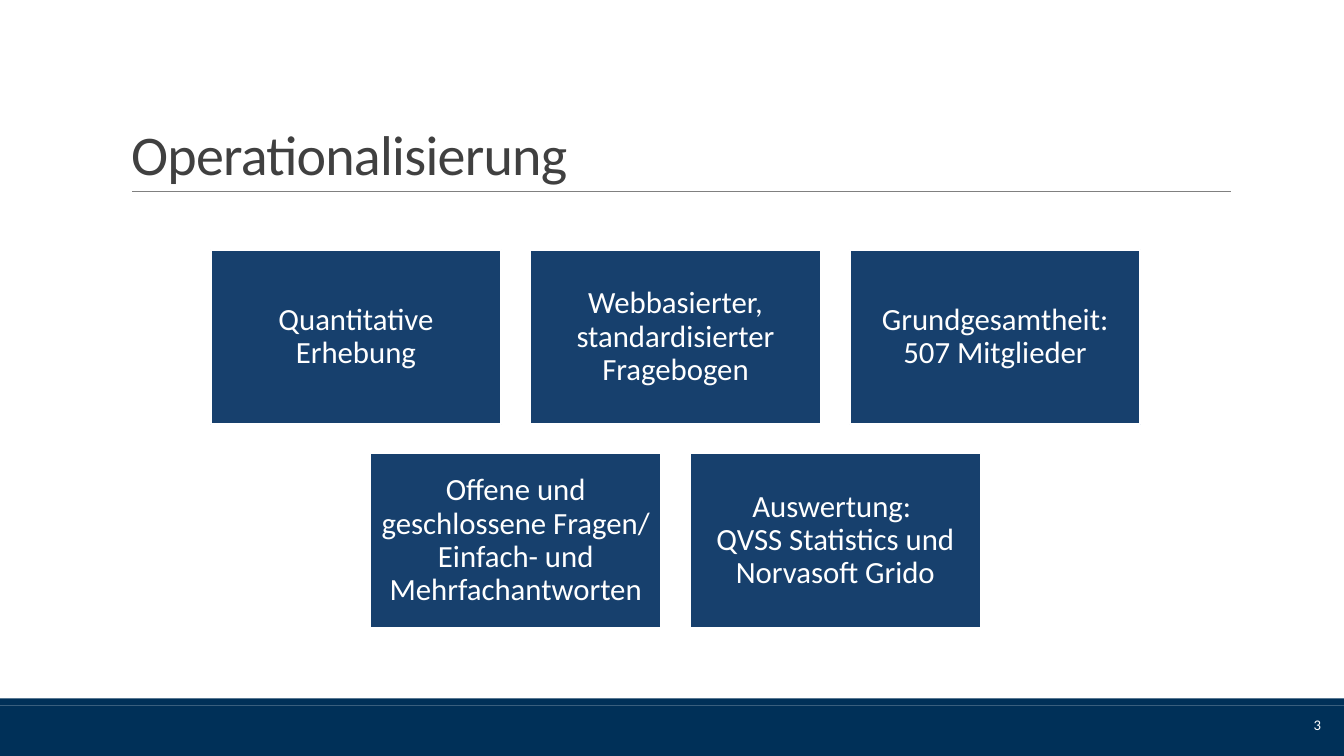
from lxml import etree
from pptx import Presentation
from pptx.dml.color import RGBColor
from pptx.enum.shapes import MSO_CONNECTOR, MSO_SHAPE
from pptx.enum.text import MSO_ANCHOR, MSO_AUTO_SIZE, PP_ALIGN
from pptx.oxml.ns import qn
from pptx.util import Inches, Pt

RECTANGLE = MSO_SHAPE.RECTANGLE
MIDDLE, BOTTOM = MSO_ANCHOR.MIDDLE, MSO_ANCHOR.BOTTOM
LEFT, CENTER, RIGHT = PP_ALIGN.LEFT, PP_ALIGN.CENTER, PP_ALIGN.RIGHT

# Content
TITLE = "Operationalisierung"
PAGE_NUMBER = "3"
CARD_ROWS = [
    [
        "Quantitative Erhebung",
        "Webbasierter, standardisierter Fragebogen",
        "Grundgesamtheit: 507 Mitglieder",
    ],
    [
        "Offene und geschlossene Fragen/ Einfach- und Mehrfachantworten",
        "Auswertung: \vQVSS Statistics und Norvasoft Grido",
    ],
]

# Style
FONT = "Calibri"
NAVY = RGBColor(0x00, 0x30, 0x58)
BLUE = RGBColor(0x17, 0x40, 0x6D)
GRAY = RGBColor(0x80, 0x80, 0x80)
DARK = RGBColor(0x40, 0x40, 0x40)
WHITE = RGBColor(0xFF, 0xFF, 0xFF)

# Layout in inches
PAGE_WIDTH, PAGE_HEIGHT = 13.33, 7.5
CARD_WIDTH, CARD_HEIGHT = 2.88, 1.73
COLUMN_STEP, ROW_STEP = 3.17, 2.02
CARDS_CENTER, CARDS_TOP = 6.7, 2.48


def add_rectangle(page, left, top, width, height, fill):
    box = page.shapes.add_shape(
        RECTANGLE, Inches(left), Inches(top), Inches(width), Inches(height))
    box.shadow.inherit = False
    box.fill.solid()
    box.fill.fore_color.rgb = fill
    box.line.fill.background()
    return box


def write(box, text, size, color, align, anchor, spacing=1.0):
    frame = box.text_frame
    frame.word_wrap = True
    frame.auto_size = MSO_AUTO_SIZE.NONE
    frame.vertical_anchor = anchor
    para = frame.paragraphs[0]
    para.text = text
    para.alignment = align
    para.line_spacing = spacing
    for span in para.runs:
        span.font.name = FONT
        span.font.size = Pt(size)
        span.font.color.rgb = color
    return para


def add_card(page, left, top, text):
    card = add_rectangle(page, left, top, CARD_WIDTH, CARD_HEIGHT, BLUE)
    card.line.color.rgb = WHITE
    card.line.width = Pt(1.25)
    frame = card.text_frame
    frame.margin_left = frame.margin_right = Inches(0.09)
    frame.margin_top = frame.margin_bottom = Inches(0.09)
    write(card, text, 22, WHITE, CENTER, MIDDLE, 0.9)


def main():
    deck = Presentation()
    deck.slide_width = Inches(PAGE_WIDTH)
    deck.slide_height = Inches(PAGE_HEIGHT)
    page = deck.slides.add_slide(deck.slide_layouts[5])

    # Footer bands
    for top, height in ((7, 0.5), (6.93, 0.07)):
        add_rectangle(page, 0, top, PAGE_WIDTH, height, NAVY)

    # Title and rule
    title = page.shapes.title
    title.left, title.top = Inches(1.2), Inches(0.31)
    title.width, title.height = Inches(11), Inches(1.59)
    para = write(title, TITLE, 40, DARK, LEFT, BOTTOM, 0.85)
    para.runs[0].font._element.set("spc", "-50")
    rule = page.shapes.add_connector(
        MSO_CONNECTOR.STRAIGHT, Inches(1.31), Inches(1.9), Inches(12.21), Inches(1.9))
    rule.line.color.rgb = GRAY
    rule.line.width = Pt(0.5)
    etree.SubElement(rule._element.spPr, qn("a:effectLst"))

    # Page number
    number = page.shapes.add_textbox(
        Inches(11.77), Inches(6.99), Inches(1.43), Inches(0.4))
    write(number, PAGE_NUMBER, 10.5, WHITE, RIGHT, MIDDLE)

    # Cards, each row centred on the same axis
    for row, texts in enumerate(CARD_ROWS):
        row_width = (len(texts) - 1) * COLUMN_STEP + CARD_WIDTH
        row_left = CARDS_CENTER - row_width / 2
        for column, text in enumerate(texts):
            add_card(page, row_left + column * COLUMN_STEP,
                     CARDS_TOP + row * ROW_STEP, text)

    deck.save("out.pptx")


if __name__ == "__main__":
    main()
